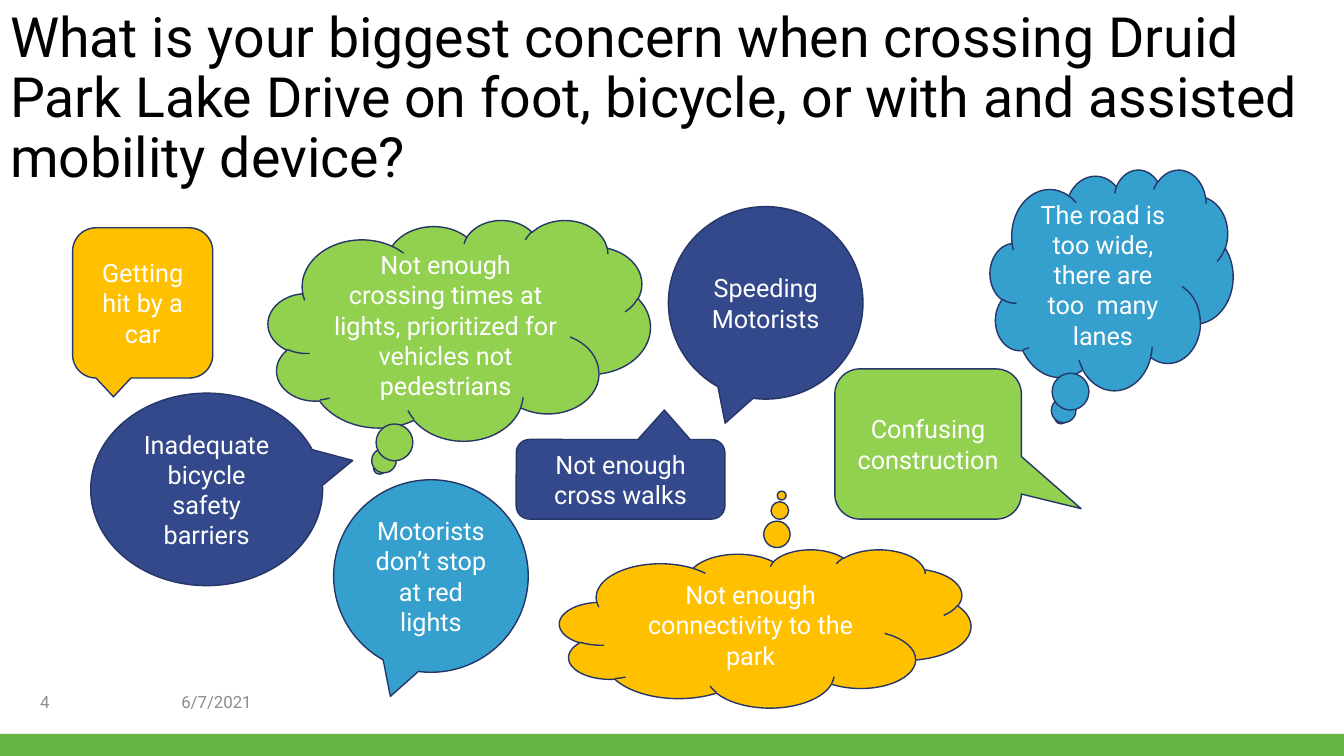
from pptx import Presentation
from pptx.dml.color import RGBColor
from pptx.enum.shapes import MSO_SHAPE
from pptx.enum.text import MSO_ANCHOR, MSO_AUTO_SIZE, PP_ALIGN
from pptx.util import Inches, Pt

GREEN, YELLOW, NAVY, BLUE = "92D050", "FFC000", "33498C", "359FCD"
ROUNDED = MSO_SHAPE.ROUNDED_RECTANGULAR_CALLOUT
OVAL = MSO_SHAPE.OVAL_CALLOUT
CLOUD = MSO_SHAPE.CLOUD_CALLOUT
WIDTH, HEIGHT = 13.33, 7.5


def rgb(color):
    return RGBColor.from_string(color)


def write(shape, text, size, color, align):
    frame = shape.text_frame
    frame.word_wrap = True
    frame.auto_size = MSO_AUTO_SIZE.NONE
    frame.vertical_anchor = MSO_ANCHOR.MIDDLE
    frame.text = text
    para = frame.paragraphs[0]
    para.alignment = align
    para.font.name = "Roboto"
    para.font.size = Pt(size)
    para.font.color.rgb = rgb(color)
    return para


deck = Presentation()
deck.slide_width, deck.slide_height = Inches(WIDTH), Inches(HEIGHT)
page = deck.slides.add_slide(deck.slide_layouts[5])

# Green band along the bottom edge
band = page.shapes.add_shape(MSO_SHAPE.RECTANGLE, 0, Inches(HEIGHT - 0.22),
                             deck.slide_width, Inches(0.22))
band.shadow.inherit = False
band.fill.solid()
band.fill.fore_color.rgb = rgb("64B444")
band.line.fill.background()

# Title
title = page.shapes.title
title.left, title.top = 0, Inches(0.26)
title.width, title.height = deck.slide_width, Inches(1.45)
question = write(title, "What is your biggest concern when crossing Druid Park Lake Drive "
                 "on foot, bicycle, or with and assisted mobility device?",
                 39.6, "000000", PP_ALIGN.LEFT)
question.line_spacing = 0.9

# Date and page number
for left, width, text in [(1.7, 1.5, "6/7/2021"), (0.3, 0.77, "4")]:
    box = page.shapes.add_textbox(Inches(left), Inches(6.76), Inches(width), Inches(0.4))
    write(box, text, 12, "8C8C8C", PP_ALIGN.LEFT)

# Concerns: kind, left, top, width, height, fill, pointer tip (None = preset), text
concerns = [
    (ROUNDED, 0.72, 2.26, 1.39, 1.49, YELLOW, None, "Getting hit by a car"),
    (CLOUD, 9.82, 1.68, 2.41, 2.19, BLUE, None,
     "The road is too wide, there are too  many lanes"),
    (OVAL, 6.63, 2.05, 1.93, 1.91, NAVY, None, "Speeding Motorists"),
    (OVAL, 3.31, 4.76, 1.93, 1.91, BLUE, None, "Motorists don’t stop at red lights"),
    (ROUNDED, 5.12, 4.36, 2.07, 0.79, NAVY, (0.21, -0.87), "Not enough cross walks"),
    (CLOUD, 2.66, 2.18, 3.79, 2.19, GREEN, None,
     "Not enough crossing times at lights, prioritized for vehicles not pedestrians"),
    (OVAL, 0.9, 3.9, 2.3, 1.91, NAVY, (0.63, -0.15), "Inadequate bicycle safety barriers"),
    (ROUNDED, 8.28, 3.66, 1.85, 1.49, GREEN, (0.82, 0.43), "Confusing construction"),
    (CLOUD, 5.55, 5.45, 4.08, 1.57, YELLOW, (0.04, -0.84),
     "Not enough connectivity to the park"),
]
for kind, left, top, width, height, fill, tip, text in concerns:
    callout = page.shapes.add_shape(kind, Inches(left), Inches(top),
                                    Inches(width), Inches(height))
    callout.shadow.inherit = False
    callout.fill.solid()
    callout.fill.fore_color.rgb = rgb(fill)
    callout.line.color.rgb = rgb("263668")
    callout.line.width = Pt(1)
    if tip:
        callout.adjustments[0], callout.adjustments[1] = tip
    write(callout, text, 18, "FFFFFF", PP_ALIGN.CENTER)

deck.save("out.pptx")
